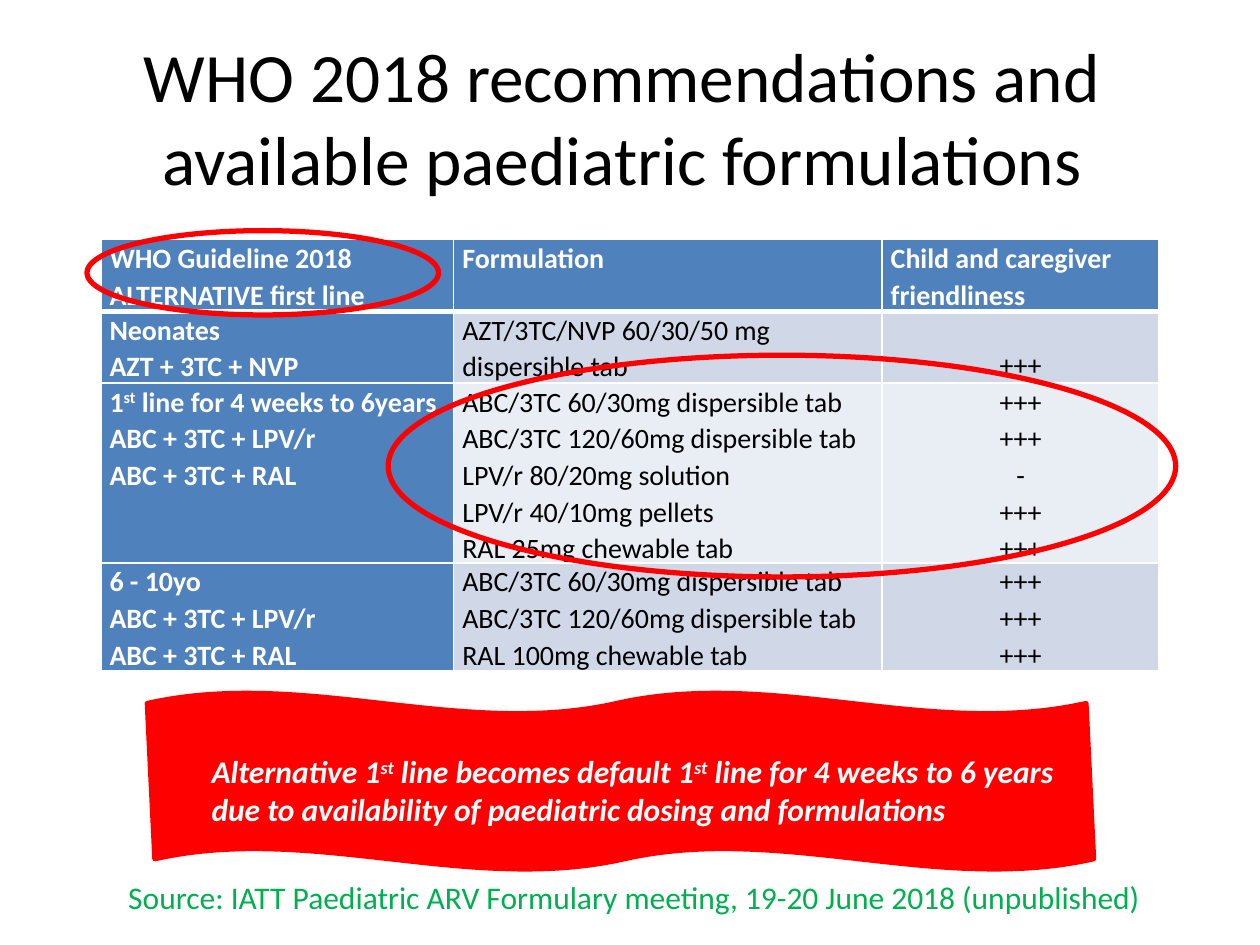
from dataclasses import dataclass

import pptx
import pptx.dml.color
import pptx.enum.shapes
import pptx.enum.text
import pptx.oxml
import pptx.oxml.ns
import pptx.util

Pt = pptx.util.Pt
SHAPES = pptx.enum.shapes.MSO_SHAPE
ALIGN = pptx.enum.text.PP_ALIGN
ANCHOR = pptx.enum.text.MSO_ANCHOR


@dataclass(frozen=True)
class Theme:
    font: str = "Calibri"
    title_size: float = 39.6
    note_size: float = 18
    table_size: float = 16
    black: str = "000000"
    white: str = "FFFFFF"
    red: str = "FF0000"
    green: str = "00B050"
    blue: str = "4F81BD"
    bands: tuple = ("D0D8E8", "E9EDF4")


def rgb(color):
    return pptx.dml.color.RGBColor.from_string(color)


class SlideBuilder:
    def __init__(self, slide, theme):
        self.s = slide
        self.theme = theme

    def fill_text(self, tf, lines, size, color, bold=False, italic=False,
                  align=ALIGN.LEFT, spacing=None):
        """Fill a text frame; text between ^ marks is superscript."""
        tf.word_wrap = True
        for i, line in enumerate(lines):
            p = tf.paragraphs[0] if i == 0 else tf.add_paragraph()
            p.alignment = align
            p.line_spacing = spacing
            font = p.font
            font.name, font.size = self.theme.font, Pt(size)
            font.bold, font.italic = bold, italic
            font.color.rgb = rgb(color)
            if "^" not in line:
                p.text = line
                continue
            for j, part in enumerate(line.split("^")):
                r = p.add_run()
                r.text = part
                if j % 2:
                    r._r.get_or_add_rPr().set("baseline", "30000")

    def text(self, box, line, size, color, anchor=ANCHOR.TOP, **style):
        tf = self.s.shapes.add_textbox(*map(Pt, box)).text_frame
        tf.vertical_anchor = anchor
        self.fill_text(tf, [line], size, color, **style)

    def shape(self, kind, box, fill=None, adjustments=()):
        sp = self.s.shapes.add_shape(kind, *map(Pt, box))
        sp.shadow.inherit = False
        for i, value in enumerate(adjustments):
            sp.adjustments[i] = value
        if fill:
            sp.fill.solid()
            sp.fill.fore_color.rgb = rgb(fill)
        else:
            sp.fill.background()
        sp.line.color.rgb = rgb(self.theme.red)
        sp.line.width = Pt(3)

    def borders(self, cell, top, bottom):
        tcPr = cell._tc.get_or_add_tcPr()
        widths = {"lnL": 1, "lnR": 1, "lnT": top, "lnB": bottom}
        for i, (side, width) in enumerate(widths.items()):
            tcPr.insert(i, pptx.oxml.parse_xml(
                f'<a:{side} {pptx.oxml.ns.nsdecls("a")} w="{Pt(width)}"><a:solidFill>'
                f'<a:srgbClr val="{self.theme.white}"/></a:solidFill></a:{side}>'))

    def table(self, left, top, widths, line_height, rows):
        """Draw rows of (height in lines, cells); each cell is a list of lines."""
        t = self.theme
        heights = [count * line_height for count, _ in rows]
        frame = self.s.shapes.add_table(len(rows), len(widths), Pt(left), Pt(top),
                                        Pt(sum(widths)), Pt(sum(heights)))
        table = frame.table
        for column, width in zip(table.columns, widths):
            column.width = Pt(width)
        for y, (_, cells) in enumerate(rows):
            table.rows[y].height = Pt(heights[y])
            for x, lines in enumerate(cells):
                cell = table.cell(y, x)
                heading = y == 0 or x == 0
                rating = y > 0 and x == 2
                cell.margin_left = cell.margin_right = Pt(5)
                cell.margin_top = cell.margin_bottom = 0
                cell.vertical_anchor = ANCHOR.BOTTOM if rating else ANCHOR.TOP
                cell.fill.solid()
                cell.fill.fore_color.rgb = rgb(t.blue if heading else t.bands[(y - 1) % 2])
                self.borders(cell, 3 if y == 1 else 1, 3 if y == 0 else 1)
                self.fill_text(cell.text_frame, lines, t.table_size,
                               t.white if heading else t.black, bold=heading,
                               align=ALIGN.CENTER if rating else ALIGN.LEFT, spacing=1.07)


def main():
    prs = pptx.Presentation()
    prs.slide_width, prs.slide_height = Pt(720), Pt(540)
    theme = Theme()
    b = SlideBuilder(prs.slides.add_slide(prs.slide_layouts[6]), theme)

    b.text((36, 21.6, 648, 90),
           "WHO 2018 recommendations and \vavailable paediatric formulations ",
           theme.title_size, theme.black, anchor=ANCHOR.MIDDLE, align=ALIGN.CENTER)

    regimens = ["ABC + 3TC + LPV/r", "ABC + 3TC + RAL"]
    abc_tabs = ["ABC/3TC 60/30mg dispersible tab", "ABC/3TC 120/60mg dispersible tab"]
    good = "+++"
    b.table(57.6, 136.8, (201.6, 244.8, 158.4), 20.5, [
        (2, (["WHO Guideline 2018 ALTERNATIVE first line"], ["Formulation"],
             ["Child and caregiver friendliness"])),
        (2, (["Neonates", "AZT + 3TC + NVP"],
             ["AZT/3TC/NVP 60/30/50 mg dispersible tab"], [good])),
        (5, (["1^st^ line for 4 weeks to 6years", *regimens],
             [*abc_tabs, "LPV/r 80/20mg solution", "LPV/r 40/10mg pellets",
              "RAL 25mg chewable tab"],
             [good, good, "-", good, good])),
        (3, (["6 - 10yo", *regimens], [*abc_tabs, "RAL 100mg chewable tab"], [good] * 3)),
    ])

    b.shape(SHAPES.OVAL, (221.8, 203, 450, 126.7))
    b.shape(SHAPES.OVAL, (49.7, 131.8, 200.9, 48.2))
    b.shape(SHAPES.DOUBLE_WAVE, (84.2, 396, 540.7, 100.8), theme.red, (0.06, 0.004))
    b.text((113.8, 426.2, 499.7, 51.1),
           "Alternative 1^st^ line becomes default 1^st^ line for 4 weeks to 6 years "
           "due to availability of paediatric dosing and formulations",
           theme.note_size, theme.white, bold=True, italic=True)
    b.text((66.2, 498.2, 596.2, 28.8),
           "Source: IATT Paediatric ARV Formulary meeting, 19-20 June 2018 (unpublished)",
           theme.note_size, theme.green)
    prs.save("out.pptx")


if __name__ == "__main__":
    main()
